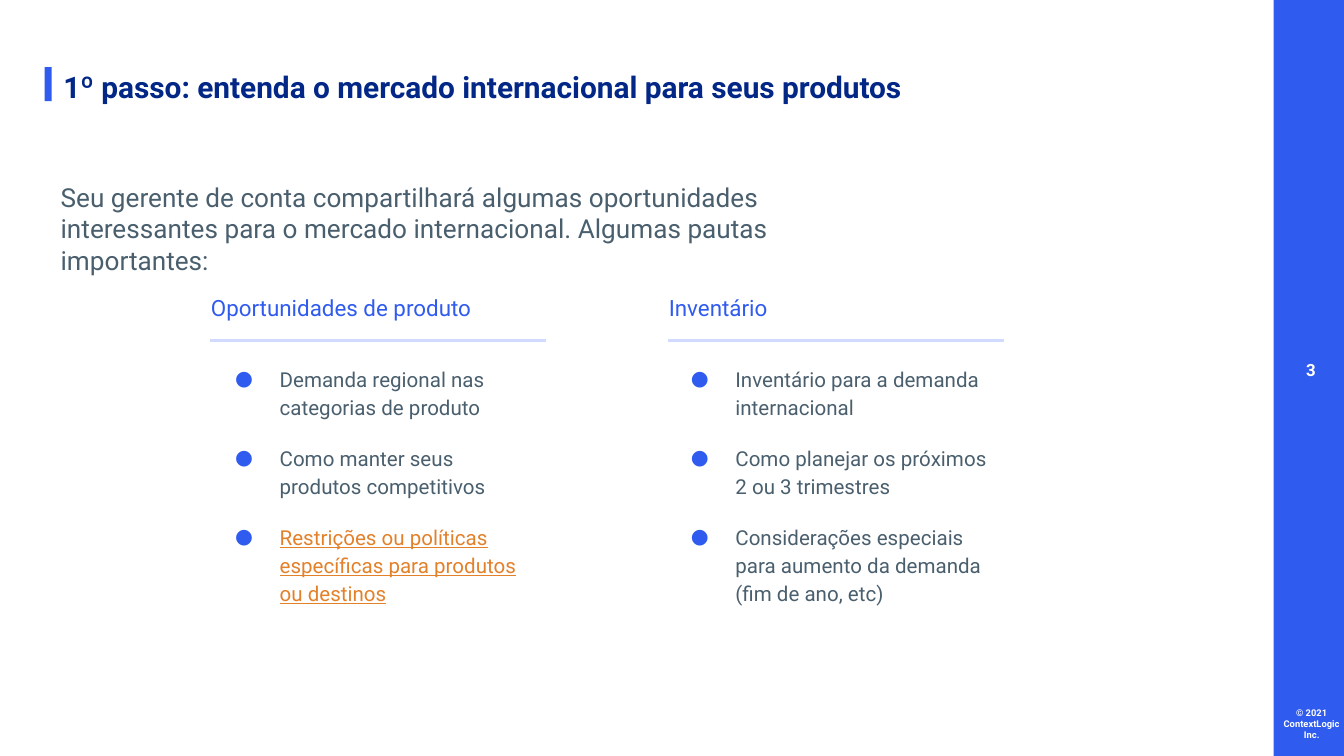
from lxml.etree import SubElement
from pptx import Presentation
from pptx.dml.color import RGBColor as RGB
from pptx.enum.shapes import MSO_CONNECTOR as CONN, MSO_SHAPE as SHAPE
from pptx.enum.text import MSO_ANCHOR as ANCHOR, PP_ALIGN as ALIGN
from pptx.oxml.ns import qn
from pptx.util import Pt

BLUE, NAVY, GRAY = "305BEF", "022786", "4A5F6E"
ORANGE, PALE, WHITE = "E3812B", "D0DBFF", "FFFFFF"

TITLE = "1º passo: entenda o mercado internacional para seus produtos"
INTRO = ("Seu gerente de conta compartilhará algumas oportunidades interessantes "
         "para o mercado internacional. Algumas pautas importantes:")
PAGE = "3"
RIGHTS = "© 2021 ContextLogic Inc."

# Each column: rule left, list left, list width, heading, items (text, marked)
COLUMNS = [
    (112.5, 113.8, 178.6, "Oportunidades de produto", [
        ("Demanda regional nas categorias de produto", False),
        ("Como manter seus produtos competitivos", False),
        ("Restrições ou políticas específicas para produtos ou destinos", True),
    ]),
    (357.8, 358, 185, "Inventário", [
        ("Inventário para a demanda internacional", False),
        ("Como planejar os próximos 2 ou 3 trimestres", False),
        ("Considerações especiais para aumento da demanda (fim de ano, etc)", False),
    ]),
]
RULE_TOP, RULE_LEN = 182.4, 180
PAD = 7.2


def color(code):
    return RGB.from_string(code)


def add_bar(slide, *box):
    bar = slide.shapes.add_shape(SHAPE.RECTANGLE, *map(Pt, box))
    bar.shadow.inherit = False
    bar.fill.solid()
    bar.fill.fore_color.rgb = color(BLUE)
    bar.line.fill.background()


def add_box(slide, box, pads):
    """Add an empty text box; pads are left, top, right, bottom."""
    frame = slide.shapes.add_textbox(*map(Pt, box)).text_frame
    frame.word_wrap = True
    frame.vertical_anchor = ANCHOR.TOP
    (frame.margin_left, frame.margin_top,
     frame.margin_right, frame.margin_bottom) = map(Pt, pads)
    return frame


def add_run(para, text, size, code, bold=False, under=False):
    run = para.add_run()
    run.text = text
    font = run.font
    font.name, font.size, font.bold = "Roboto", Pt(size), bold
    font.color.rgb = color(code)
    if under:
        font.underline = True


def add_text(slide, box, text, size, code, pads=(PAD,) * 4, bold=False, align=ALIGN.LEFT):
    para = add_box(slide, box, pads).paragraphs[0]
    para.alignment = align
    add_run(para, text, size, code, bold)


def add_rule(slide, left):
    rule = slide.shapes.add_connector(
        CONN.STRAIGHT, Pt(left), Pt(RULE_TOP), Pt(left + RULE_LEN), Pt(RULE_TOP))
    rule.line.color.rgb = color(PALE)
    rule.line.width = Pt(1.5)
    SubElement(rule._element.spPr, qn("a:effectLst"))


def set_bullet(para):
    props = para._p.get_or_add_pPr()
    props.set("marL", str(Pt(36)))
    props.set("indent", str(-Pt(23.9)))
    tint = SubElement(props, qn("a:buClr"))
    SubElement(tint, qn("a:srgbClr"), val=BLUE)
    SubElement(props, qn("a:buFont"), typeface="Roboto")
    SubElement(props, qn("a:buChar"), char="●")


def add_list(slide, box, items):
    frame = add_box(slide, box, (0, 0, PAD, PAD))
    for i, (text, marked) in enumerate(items):
        para = frame.add_paragraph() if i else frame.paragraphs[0]
        set_bullet(para)
        para.line_spacing = 1.15
        if i:
            para.space_before = Pt(12)
        add_run(para, text, 11, ORANGE if marked else GRAY, under=marked)


def main():
    deck = Presentation()
    deck.slide_width, deck.slide_height = Pt(720), Pt(405)
    slide = deck.slides.add_slide(deck.slide_layouts[6])

    add_bar(slide, 23.9, 36, 3.8, 18.2)
    add_bar(slide, 682.3, 0, 37.7, 405)
    add_text(slide, (683.5, 187.2, 37.5, 31), PAGE, 9, WHITE, bold=True, align=ALIGN.CENTER)
    add_text(slide, (678.2, 371.5, 49, 33.5), RIGHTS, 5, WHITE, bold=True, align=ALIGN.CENTER)
    add_text(slide, (33.9, 33.1, 647, 24.5), TITLE, 16, NAVY, (0, 3.6, 0, 0), bold=True)
    add_text(slide, (32.5, 90, 391, 48.2), INTRO, 14, GRAY, (0, PAD, PAD, PAD))

    for rule, left, width, head, items in COLUMNS:
        add_text(slide, (rule - 6.6, 150.5, 216.7, 31.7), head, 12, BLUE)
        add_rule(slide, rule)
        add_list(slide, (left, 194.4, width, 140.4), items)

    deck.save("out.pptx")


if __name__ == "__main__":
    main()
